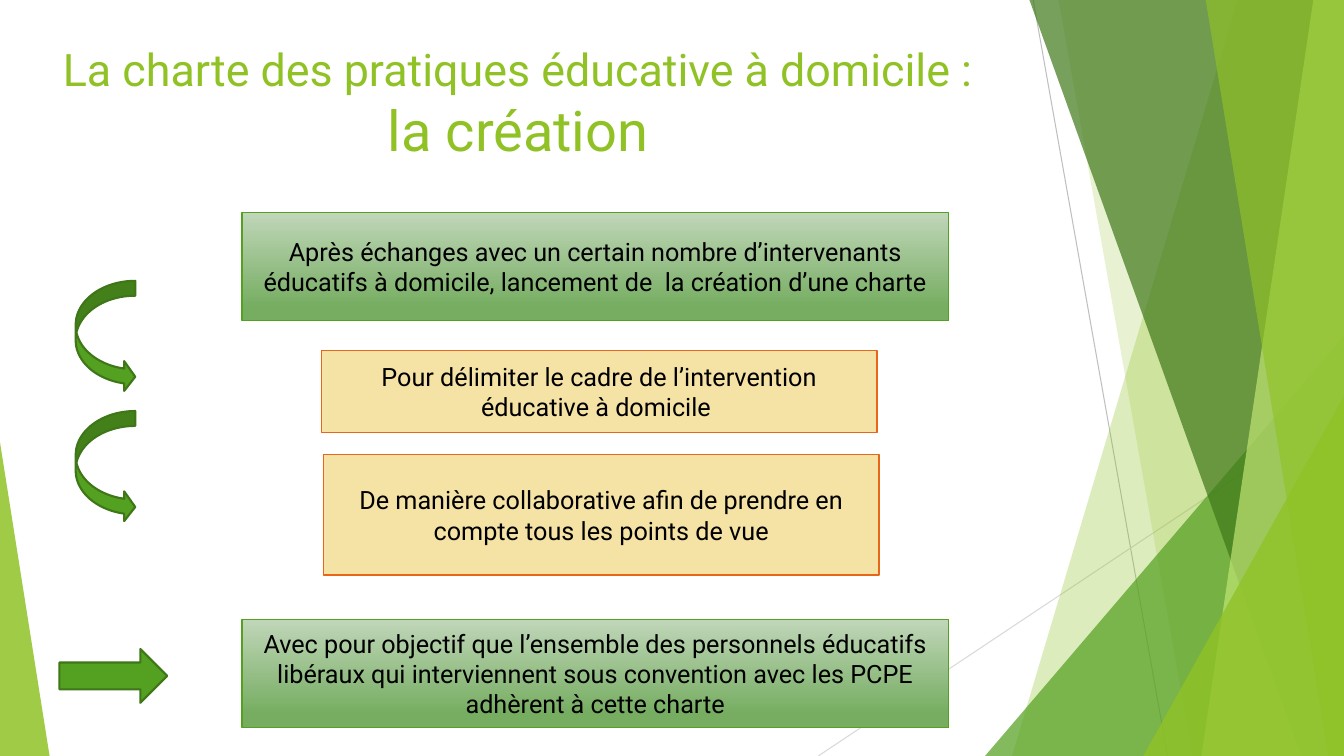
from lxml.etree import SubElement
from pptx import Presentation
from pptx.dml.color import RGBColor
from pptx.enum.shapes import MSO_CONNECTOR, MSO_SHAPE as SHAPE
from pptx.enum.text import MSO_ANCHOR as ANCHOR, PP_ALIGN
from pptx.oxml.ns import qn
from pptx.util import Pt

LIME, GREEN, DARK_GREEN = "90C226", "54A021", "3E7618"
SAND, ORANGE, BLACK = "F5E3A5", "E76618", "000000"


def paint(color_format, hex_color, opacity=100):
    """Set a colour, with opacity in percent."""
    color_format.rgb = RGBColor.from_string(hex_color)
    if opacity < 100:
        srgb = color_format._xFill.find(qn("a:srgbClr"))
        SubElement(srgb, qn("a:alpha"), val=str(opacity * 1000))


def write(paragraph, text, size, color):
    paragraph.alignment = PP_ALIGN.CENTER
    run = paragraph.add_run()
    run.text = text
    for attribute, value in {"name": "Roboto", "size": Pt(size)}.items():
        setattr(run.font, attribute, value)
    paint(run.font.color, color)


deck = Presentation()
deck.slide_width, deck.slide_height = Pt(960), Pt(540)
slide = deck.slides.add_slide(deck.slide_layouts[6])
shapes = slide.shapes

# Thin lines behind the facets
for x1, y1, x2, y2, color in [(738, 0, 834, 540, "BFBFBF"),
                              (960, 290, 584.5, 540, "D9D9D9")]:
    ray = shapes.add_connector(MSO_CONNECTOR.STRAIGHT, Pt(x1), Pt(y1), Pt(x2), Pt(y2))
    ray.line.width = Pt(0.75)
    paint(ray.line.color, color)
    SubElement(ray._element.spPr, qn("a:effectLst"))

# Facets: a band runs from its top x and bottom x to the right edge,
# a triangle has its left, top, width and the side of its apex
facets = [
    ("band", (884.2, 722.9), LIME, 30),
    ("band", (756, 851.8), LIME, 20),
    ("triangle", (703.6, 240, 256.4, 1), GREEN, 72),
    ("band", (735.1, 929.5), "3F7819", 70),
    ("band", (938.2, 858.2), "C0E474", 70),
    ("band", (861.1, 949), LIME, 65),
    ("triangle", (816.6, 283, 143.4, 1), LIME, 80),
    ("triangle", (0, 316, 35.4, 0), LIME, 85),
]
for kind, geometry, color, opacity in facets:
    if kind == "band":
        top_x, bottom_x = geometry
        outline = shapes.build_freeform(Pt(top_x), Pt(-0.7))
        outline.add_line_segments([(Pt(960), Pt(-0.7)), (Pt(960), Pt(540)),
                                   (Pt(bottom_x), Pt(540))])
        facet = outline.convert_to_shape()
    else:
        left, top, width, apex = geometry
        facet = shapes.add_shape(SHAPE.ISOSCELES_TRIANGLE, Pt(left), Pt(top),
                                 Pt(width), Pt(540 - top))
        facet.adjustments[0] = apex
    facet.shadow.inherit = False
    facet.fill.solid()
    paint(facet.fill.fore_color, color, opacity)
    facet.line.fill.background()

# Steps of the charter: main steps are green, details are sand
steps = [
    ("main", 172.8, 151.8, 504.9, 77.3,
     "Après échanges avec un certain nombre d’intervenants éducatifs à domicile, "
     "lancement de  la création d’une charte"),
    ("detail", 229.5, 250.4, 397, 58.4,
     "Pour délimiter le cadre de l’intervention éducative à domicile "),
    ("detail", 231, 324.8, 397, 86,
     "De manière collaborative afin de prendre en compte tous les points de vue"),
    ("main", 172.8, 442.4, 504.9, 77.3,
     "Avec pour objectif que l’ensemble des personnels éducatifs libéraux qui "
     "interviennent sous convention avec les PCPE adhèrent à cette charte"),
]
for level, left, top, width, height, text in steps:
    step = shapes.add_shape(SHAPE.RECTANGLE, Pt(left), Pt(top), Pt(width), Pt(height))
    step.shadow.inherit = False
    if level == "main":
        step.fill.gradient()
        step.fill.gradient_angle = 270
        for stop, position, color in zip(step.fill.gradient_stops, (0, 0.88),
                                         ("C0D6B9", "76AD61")):
            stop.position = position
            paint(stop.color, color)
    else:
        step.fill.solid()
        paint(step.fill.fore_color, SAND)
    step.line.width = Pt(1)
    paint(step.line.color, GREEN if level == "main" else ORANGE)
    step.text_frame.word_wrap = True
    step.text_frame.vertical_anchor = ANCHOR.MIDDLE
    write(step.text_frame.paragraphs[0], text, 18, BLACK)

# Arrows beside the steps
arrows = [
    (SHAPE.CURVED_RIGHT_ARROW, 54, 200.6, 42.6, 79.2, (0.25, 0.5, 0.185)),
    (SHAPE.CURVED_RIGHT_ARROW, 54, 293.6, 42.6, 79.2, (0.25, 0.5, 0.185)),
    (SHAPE.RIGHT_ARROW, 42.5, 463.6, 77, 38.4, (0.5, 0.5)),
]
for preset, left, top, width, height, proportions in arrows:
    arrow = shapes.add_shape(preset, Pt(left), Pt(top), Pt(width), Pt(height))
    for index, proportion in enumerate(proportions):
        arrow.adjustments[index] = proportion
    arrow.shadow.inherit = False
    arrow.fill.solid()
    paint(arrow.fill.fore_color, GREEN)
    arrow.line.width = Pt(1.5)
    paint(arrow.line.color, DARK_GREEN)

# Title
title = shapes.add_textbox(Pt(21.6), Pt(26), Pt(697), Pt(103.7)).text_frame
title.word_wrap = True
heading = title.paragraphs[0]
write(heading, "La charte des pratiques éducative à domicile :", 32, LIME)
heading.add_line_break()
write(heading, "la création", 40, LIME)

deck.save("out.pptx")
